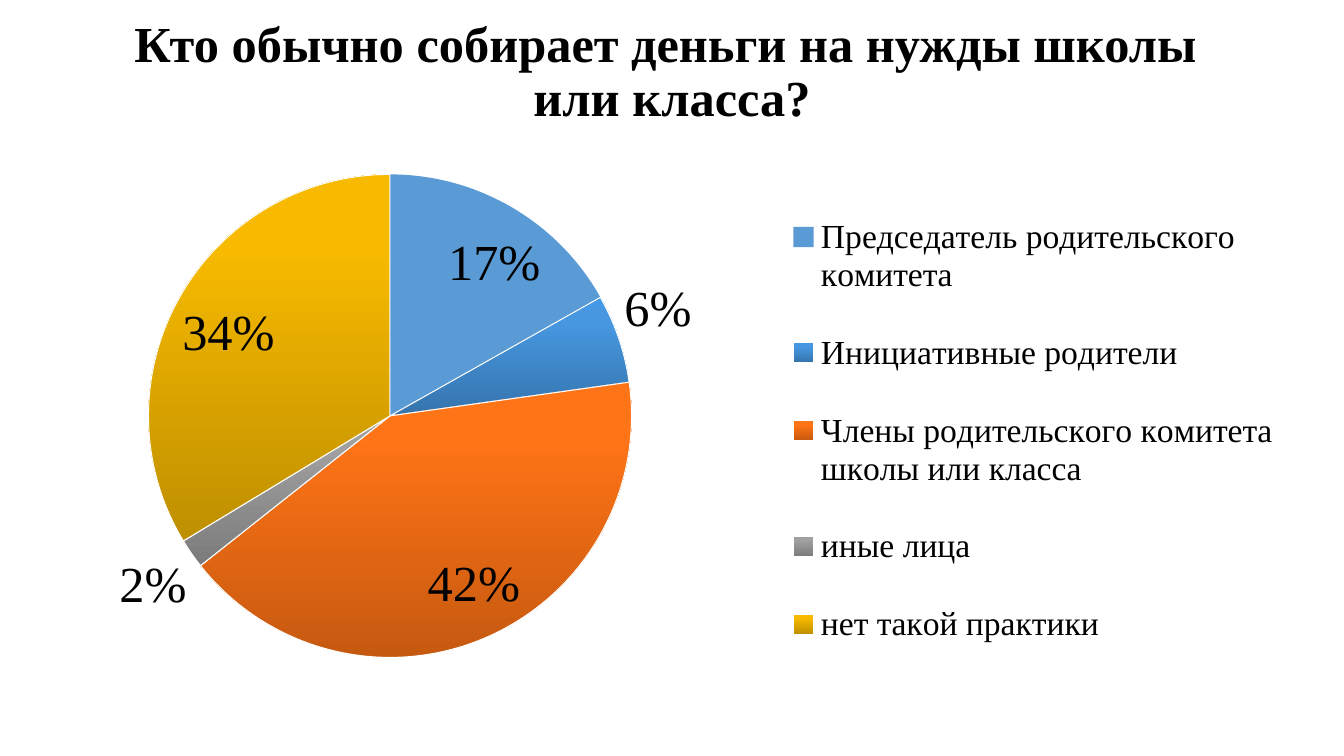
from copy import deepcopy

from lxml import etree
from pptx import Presentation
from pptx import util as u
from pptx.chart import data as cd
from pptx.dml.color import RGBColor
from pptx.enum import chart as ch, text
from pptx.oxml.ns import qn

PX = 9525  # 96 px to the inch
FONT = "Times New Roman"
COLORS = {"text": "000000", "edge": "FFFFFF"}
STOPS = (0, 0.8, 1)
# category, percent, fill colours from bottom to top
ANSWERS = [
    ("Председатель родительского комитета", 17, ["5B9BD5"]),
    ("Инициативные родители", 6, ["3674AD", "4697E0", "4498E4"]),
    ("Члены родительского комитета школы или класса", 42,
     ["C65910", "FF7416", "FF7517"]),
    ("иные лица", 2, ["7B7B7B", "A0A0A0", "A1A1A1"]),
    ("нет такой практики", 34, ["BE8F00", "F7BA00", "F8BB00"]),
]


def box(*px):
    return [u.Emu(v * PX) for v in px]


def rgb(value):
    return RGBColor.from_string(value)


def set_font(font, size, name=FONT, color=COLORS["text"], bold=False):
    font.size, font.name, font.bold = u.Pt(size), name, bold
    font.color.rgb = rgb(color)


def add_text(s, content, at, size, bold=False, align=text.PP_ALIGN.CENTER,
             spacing=0.9):
    tf = s.shapes.add_textbox(*box(*at)).text_frame
    tf.word_wrap = True
    tf.auto_size = text.MSO_AUTO_SIZE.NONE
    tf.vertical_anchor = text.MSO_ANCHOR.MIDDLE
    p = tf.paragraphs[0]
    p.text, p.alignment, p.line_spacing = content, align, spacing
    for r in p.runs:
        set_font(r.font, size, bold=bold)


def fill_slice(point, colors):
    fill = point.format.fill
    if len(colors) == 1:
        fill.solid()
        fill.fore_color.rgb = rgb(colors[0])
        return
    fill.gradient()
    fill.gradient_angle = 90
    last = fill.gradient_stops[-1]._gs
    last.addnext(deepcopy(last))
    for stop, position, color in zip(fill.gradient_stops, STOPS, colors):
        stop.position = position
        stop.color.rgb = rgb(color)
    point.format.line.color.rgb = rgb(COLORS["edge"])
    point.format.line.width = u.Pt(0.75)


def set_layout(parent, index, x, y, w, h, inner=False):
    for old in parent.findall(qn("c:layout")):
        parent.remove(old)
    layout = etree.Element(qn("c:layout"))
    manual = etree.SubElement(layout, qn("c:manualLayout"))
    values = [("layoutTarget", "inner")] if inner else []
    values += [("xMode", "edge"), ("yMode", "edge"),
               ("x", x), ("y", y), ("w", w), ("h", h)]
    for tag, value in values:
        etree.SubElement(manual, qn("c:" + tag)).set("val", str(value))
    parent.insert(index, layout)


def add_pie(s, answers, at):
    data = cd.CategoryChartData()
    data.categories = [name for name, _, _ in answers]
    data.add_series("Series 1", [value for _, value, _ in answers])
    chart = s.shapes.add_chart(ch.XL_CHART_TYPE.PIE, *box(*at), data).chart
    chart.has_title = False
    set_font(chart.font, 10, "Calibri")

    # Slices
    plot = chart.plots[0]
    plot.vary_by_categories = True
    for i, (_, _, colors) in enumerate(answers):
        fill_slice(plot.series[0].points[i], colors)

    # Percent labels
    plot.has_data_labels = True
    labels = plot.data_labels
    labels.show_percentage, labels.show_value = True, False
    labels.number_format, labels.number_format_is_linked = "0%", False
    labels.position = ch.XL_LABEL_POSITION.BEST_FIT
    set_font(labels.font, 36)

    # Legend and plot places
    chart.has_legend = True
    legend = chart.legend
    legend.position = ch.XL_LEGEND_POSITION.TOP
    legend.include_in_layout = False
    set_font(legend.font, 24)
    set_layout(legend._element, 1, 0.54, 0.09, 0.43, 0.84)
    plot_area = chart._chartSpace.chart.plotArea
    set_layout(plot_area, 0, 0.058, 0.084, 0.381, 0.803, inner=True)


def main():
    prs = Presentation()
    prs.slide_width, prs.slide_height = box(1280, 720)
    s = prs.slides.add_slide(prs.slide_layouts[6])
    # Title
    add_text(s, "Кто обычно собирает деньги на нужды школы \vили класса?",
             (0, 0, 1280, 139), 36, bold=True)
    # Answers
    add_pie(s, ANSWERS, (71, 118, 1209, 573))
    prs.save("out.pptx")


if __name__ == "__main__":
    main()
